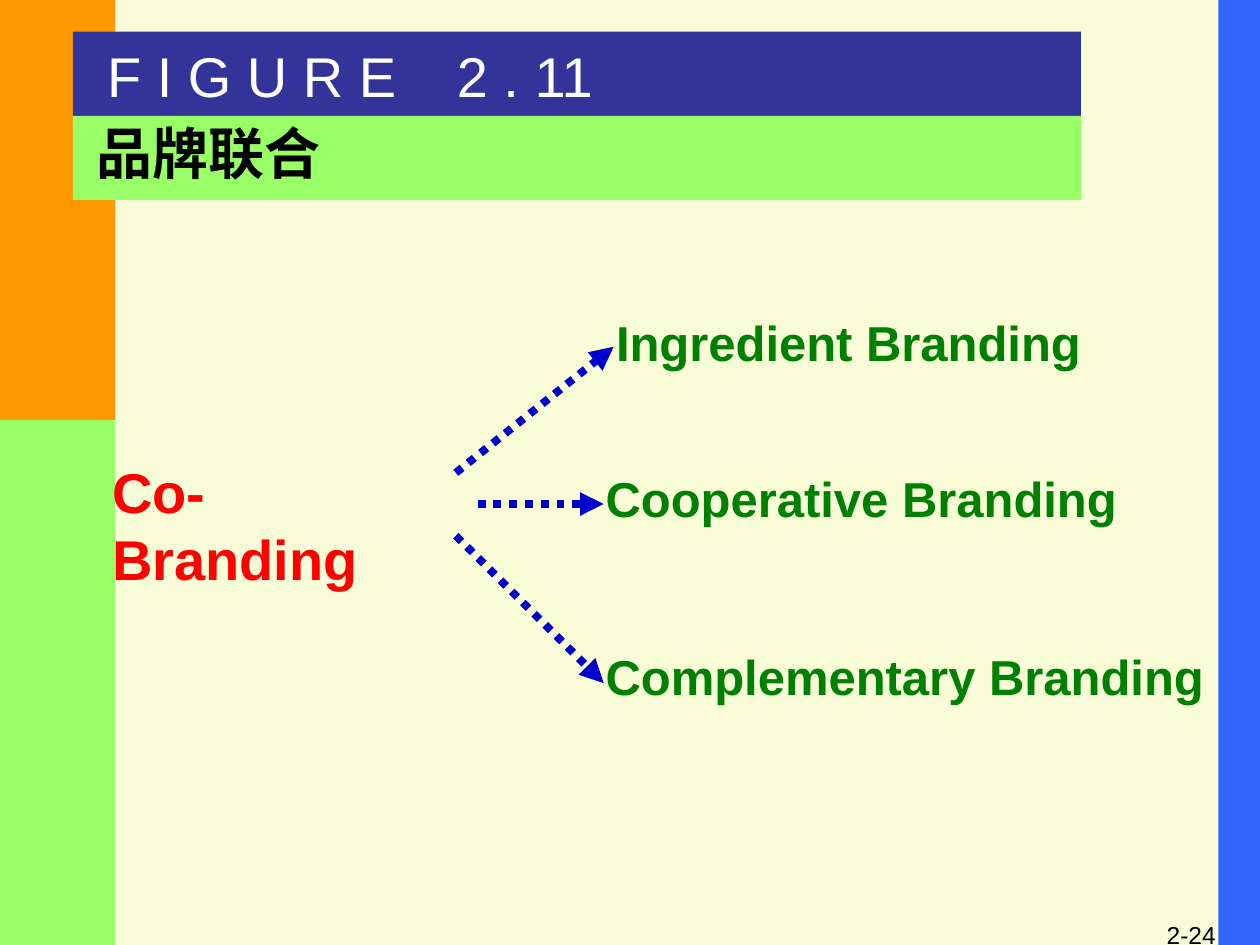
from lxml.etree import SubElement
from pptx import Presentation
from pptx.dml.color import RGBColor
from pptx.enum.dml import MSO_LINE_DASH_STYLE as DASH
from pptx.enum.shapes import MSO_CONNECTOR, MSO_SHAPE
from pptx.enum.text import MSO_ANCHOR, MSO_AUTO_SIZE, PP_ALIGN
from pptx.oxml.ns import qn
from pptx.util import Cm, Pt

CREAM = RGBColor(0xF9, 0xFD, 0xD7)
BLUE = RGBColor(0x33, 0x66, 0xFF)
ORANGE = RGBColor(0xFF, 0x99, 0x00)
LIME = RGBColor(0x99, 0xFF, 0x66)
NAVY = RGBColor(0x33, 0x33, 0x99)
ARROW_BLUE = RGBColor(0x00, 0x00, 0xCC)
GREEN = RGBColor(0x00, 0x80, 0x00)
RED = RGBColor(0xFF, 0x00, 0x00)
WHITE = RGBColor(0xFF, 0xFF, 0xFF)
BLACK = RGBColor(0x00, 0x00, 0x00)

SLIDE_W, SLIDE_H = 25.4, 19.05


def add_band(slide, box, color):
    sp = slide.shapes.add_shape(MSO_SHAPE.RECTANGLE, *map(Cm, box))
    sp.shadow.inherit = False
    sp.fill.solid()
    sp.fill.fore_color.rgb = color
    sp.line.fill.background()


def write_text(sp, text, size, color, bold=False, align=PP_ALIGN.LEFT, **frame):
    """Fill a shape with one run; frame holds text frame attributes."""
    tf = sp.text_frame
    for name, value in {"auto_size": MSO_AUTO_SIZE.NONE, "word_wrap": True, **frame}.items():
        setattr(tf, name, value)
    p = tf.paragraphs[0]
    p.alignment = align
    r = p.add_run()
    r.text = text
    for name, value in {"name": "Arial", "size": Pt(size), "bold": bold}.items():
        setattr(r.font, name, value)
    r.font.color.rgb = color
    return p


def add_text(slide, box, *args, **kwargs):
    return write_text(slide.shapes.add_textbox(*map(Cm, box)), *args, **kwargs)


def add_dotted_arrow(slide, start, end):
    cn = slide.shapes.add_connector(MSO_CONNECTOR.STRAIGHT, *map(Cm, start + end))
    cn.line.color.rgb = ARROW_BLUE
    cn.line.width = Pt(4.5)
    cn.line.dash_style = DASH.ROUND_DOT
    sp_pr = cn.line._get_or_add_ln().getparent()
    SubElement(sp_pr.find(qn("a:ln")), qn("a:tailEnd"), type="triangle")
    SubElement(sp_pr, qn("a:effectLst"))


def add_side_bars(slide, left_w, right_w, split):
    """Two stacked bars on the left edge and one on the right edge."""
    add_band(slide, (SLIDE_W - right_w, 0, right_w, SLIDE_H), BLUE)
    add_band(slide, (0, 0, left_w, split), ORANGE)
    add_band(slide, (0, split, left_w, SLIDE_H - split), LIME)


def add_header(slide, x, y, w, h):
    """Figure number band above the title band."""
    half = h / 2
    for i, color in enumerate((NAVY, LIME)):
        add_band(slide, (x, y + i * half, w, half), color)

    p = add_text(slide, (x + 0.44, y + 0.07, 10.59, 1.6), "F I G U R E\t2 . 11", 32, WHITE)
    tabs = SubElement(p._p.get_or_add_pPr(), qn("a:tabLst"))
    SubElement(tabs, qn("a:tab"), pos=str(Cm(7.05)), algn="l")

    title = slide.shapes.title
    title.left, title.top, title.width, title.height = map(
        Cm, (x + 0.23, y + half, 17.78, 1.47))
    write_text(title, "品牌联合", 32, BLACK, bold=True, vertical_anchor=MSO_ANCHOR.MIDDLE)
    title._element.getparent().append(title._element)  # in front of its band


def add_branches(slide, x, y):
    """Root term with dotted arrows to its three kinds."""
    add_text(slide, (x, y + 2.92, 7.65, 1.6), "Co- Branding", 32, RED, bold=True,
             margin_right=Cm(0.9))
    branches = [
        ("Ingredient Branding", (10.16, 0, 9.91), (7.18, 3.36), (10.36, 0.82)),
        ("Cooperative Branding", (9.95, 3.15, 10.85), (7.62, 3.99), (10.16, 3.99)),
        ("Complementary Branding", (9.95, 6.73, 12.6), (7.18, 4.63), (10.16, 7.6)),
    ]
    for text, (dx, dy, w), start, end in branches:
        add_text(slide, (x + dx, y + dy, w, 1.45), text, 28, GREEN, bold=True,
                 word_wrap=False)
        add_dotted_arrow(slide, *((x + px, y + py) for px, py in (start, end)))


def main():
    prs = Presentation()
    prs.slide_width, prs.slide_height = Cm(SLIDE_W), Cm(SLIDE_H)
    slide = prs.slides.add_slide(prs.slide_layouts[5])
    slide.background.fill.solid()
    slide.background.fill.fore_color.rgb = CREAM

    add_text(slide, (19.48, 18.42, 5.28, 1.27), "2-24", 14, BLACK, align=PP_ALIGN.RIGHT)
    add_side_bars(slide, 2.33, 0.84, 8.47)
    add_branches(slide, 2.01, 6.17)
    add_header(slide, 1.47, 0.64, 20.32, 3.39)
    prs.save("out.pptx")


if __name__ == "__main__":
    main()
